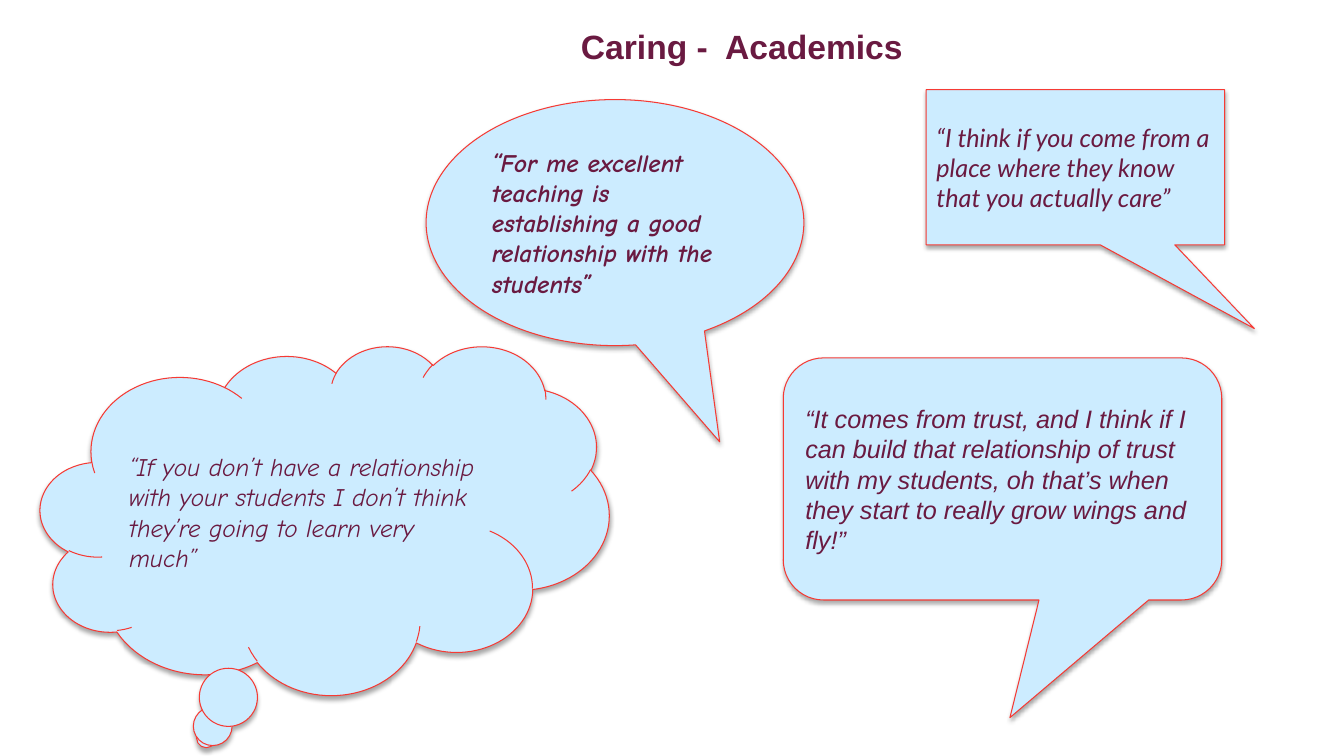
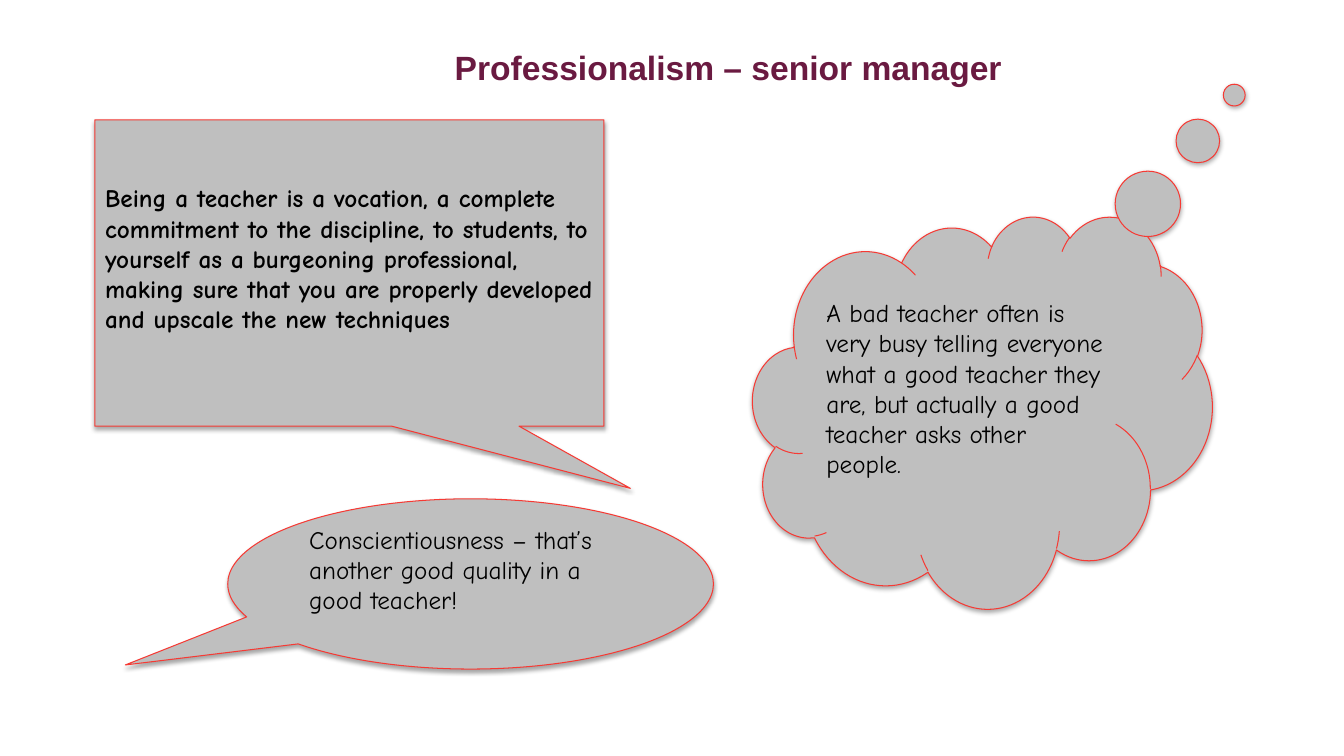
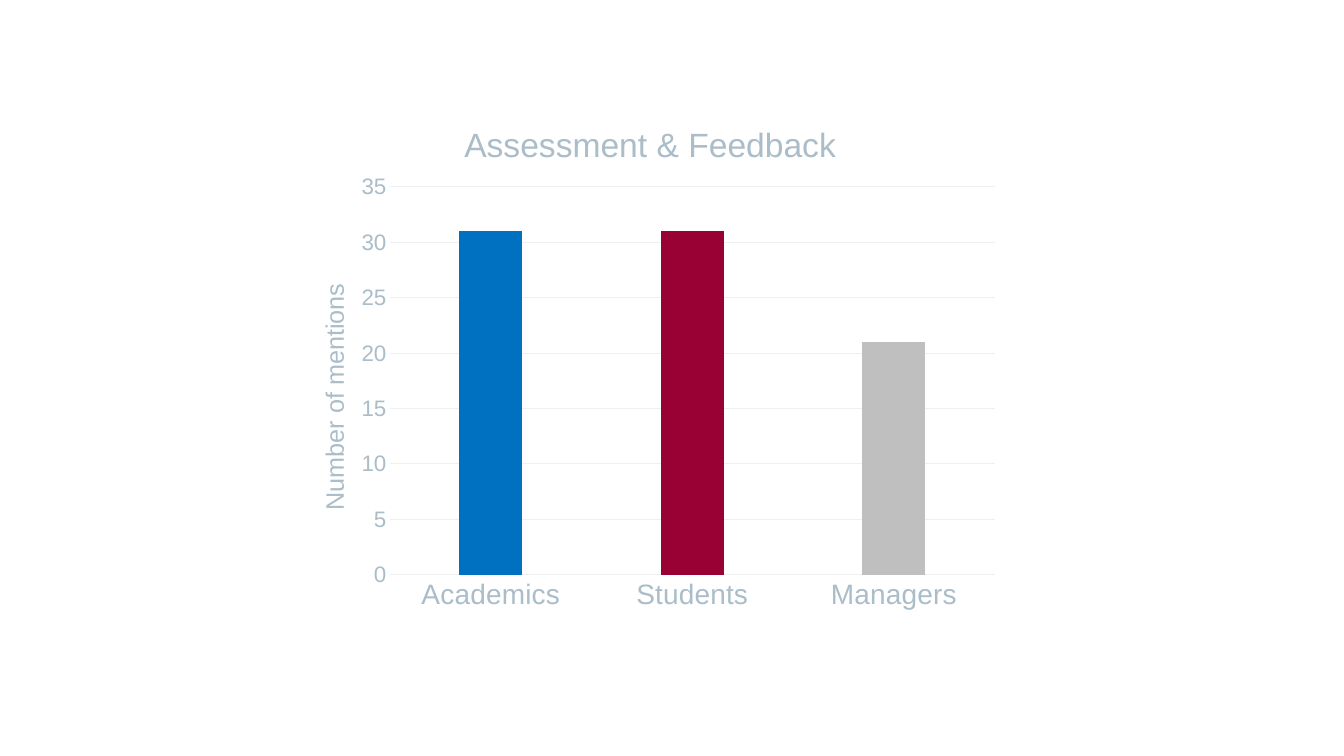
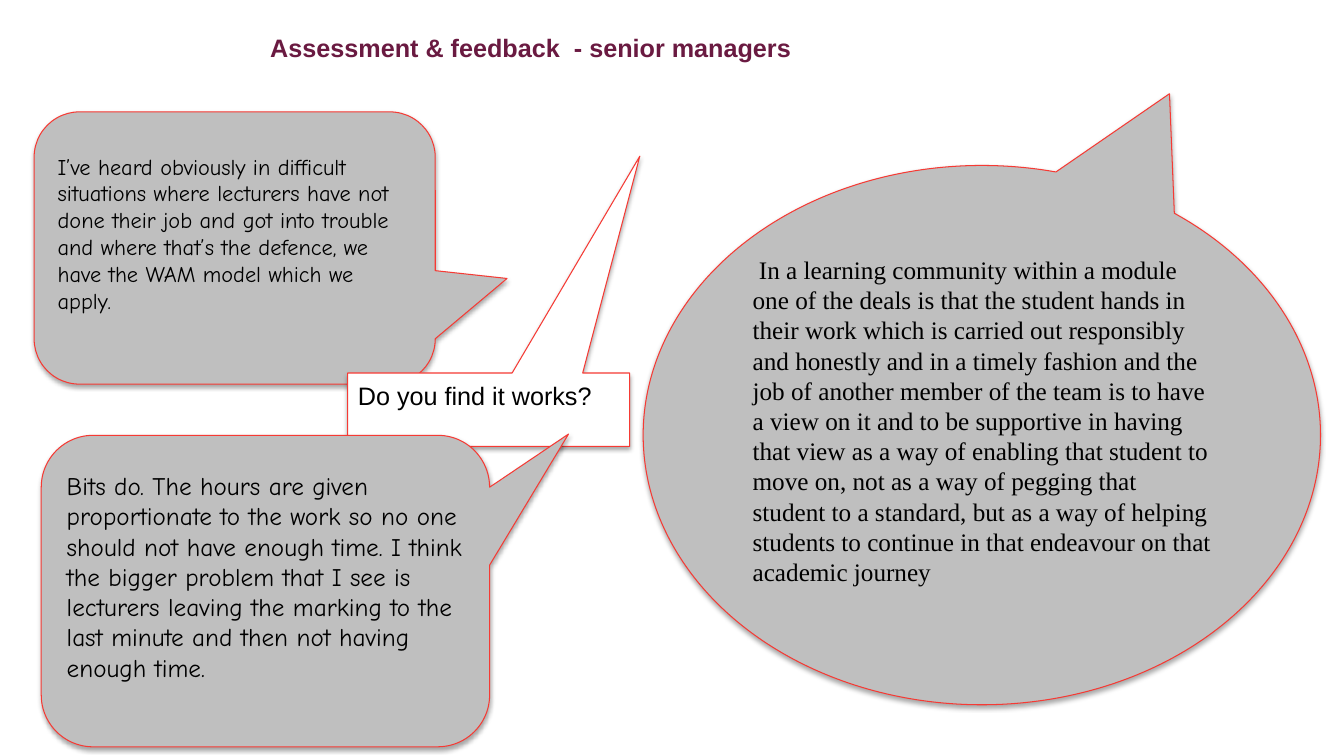
"""Build four slides of interview quotes and a chart about teaching."""
from lxml import etree
from pptx import Presentation
from pptx.chart.data import CategoryChartData
from pptx.dml.color import RGBColor
from pptx.enum.chart import XL_CHART_TYPE as ChartType, XL_TICK_MARK as Tick
from pptx.enum.shapes import MSO_SHAPE as Shape
from pptx.enum.text import MSO_ANCHOR as Anchor, MSO_AUTO_SIZE as AutoSize, PP_ALIGN as Align
from pptx.oxml.ns import qn
from pptx.util import Cm, Pt

PLUM = RGBColor(0x6A, 0x1A, 0x41)
BLACK = RGBColor(0x00, 0x00, 0x00)
WHITE = RGBColor(0xFF, 0xFF, 0xFF)
SKY = RGBColor(0xCC, 0xEC, 0xFF)
SILVER = RGBColor(0xBF, 0xBF, 0xBF)
RED = RGBColor(0xF6, 0x3A, 0x34)
BLUE = RGBColor(0x00, 0x70, 0xC0)
CRIMSON = RGBColor(0x99, 0x00, 0x33)
MIST = RGBColor(0xAA, 0xBD, 0xC8)
PALE = RGBColor(0xEC, 0xF0, 0xF2)

SANS, HAND, HUMAN, SERIF = "Arial", "Comic Neue", "Lato", "Times New Roman"
TITLE_ONLY, BLANK = 5, 6
INSET = 0.13
LOWER_SPACE = 0.74


def set_font(font, size, color, name=SANS, bold=False, italic=False):
    font.name, font.size = name, Pt(size)
    font.bold, font.italic = bold, italic
    font.color.rgb = color


def write_text(frame, text, anchor=Anchor.MIDDLE, lift=0, **style):
    """Fill a frame with one left-aligned paragraph, lifted by extra space below."""
    frame.word_wrap = True
    frame.auto_size = AutoSize.NONE
    frame.vertical_anchor = anchor
    frame.margin_left = frame.margin_right = Cm(2 * INSET)
    frame.margin_top, frame.margin_bottom = Cm(INSET), Cm(INSET + lift)
    paragraph = frame.paragraphs[0]
    paragraph.alignment = Align.LEFT
    run = paragraph.add_run()
    run.text = text
    set_font(run.font, **style)


def add_titled_slide(deck, title, box, size=24):
    slide = deck.slides.add_slide(deck.slide_layouts[TITLE_ONLY])
    heading = slide.shapes.title
    heading.left, heading.top, heading.width, heading.height = map(Cm, box)
    write_text(heading.text_frame, title, anchor=Anchor.TOP,
               size=size, color=PLUM, bold=True)
    return slide


def add_soft_shadow(shape):
    shape.shadow.inherit = False
    effects = shape._element.spPr.find(qn("a:effectLst"))
    shadow = etree.SubElement(effects, qn("a:outerShdw"), blurRad="40000",
                              dist="23000", dir="5400000", rotWithShape="0")
    tint = etree.SubElement(shadow, qn("a:srgbClr"), val=str(BLACK))
    etree.SubElement(tint, qn("a:alpha"), val="35000")


def add_callout(slide, kind, box, text, pointer=(), fill=SILVER, lift=LOWER_SPACE,
                size=18, color=BLACK, **style):
    """Add a speech or thought bubble whose pointer is relative to its centre."""
    bubble = slide.shapes.add_shape(kind, *map(Cm, box))
    for index, offset in enumerate(pointer):
        bubble.adjustments[index] = offset
    bubble.fill.solid()
    bubble.fill.fore_color.rgb = fill
    bubble.line.color.rgb = RED
    bubble.line.width = Pt(0.75)
    add_soft_shadow(bubble)
    write_text(bubble.text_frame, text, lift=lift, size=size, color=color, **style)


def place(element, index, **settings):
    """Give a chart part a manual layout, as fractions of the chart."""
    for old in element.findall(qn("c:layout")):
        element.remove(old)
    layout = etree.Element(qn("c:layout"))
    manual = etree.SubElement(layout, qn("c:manualLayout"))
    for tag, value in settings.items():
        etree.SubElement(manual, qn(f"c:{tag}"), val=str(value))
    element.insert(index, layout)


def write_chart_title(title, text, size, x, y):
    frame = title.text_frame
    frame.text = text
    set_font(frame.paragraphs[0].runs[0].font, size, MIST)
    place(title._element, 1, xMode="edge", yMode="edge", x=x, y=y)


def style_axis(axis, size):
    axis.major_tick_mark = axis.minor_tick_mark = Tick.NONE
    set_font(axis.tick_labels.font, size, MIST)


def draw_pale(line):
    line.color.rgb = PALE
    line.width = Pt(0.75)


def add_mentions_chart(slide, box, title, axis_title, mentions, colors):
    data = CategoryChartData()
    data.categories = list(mentions)
    data.add_series("Series 1", list(mentions.values()))
    chart = slide.shapes.add_chart(ChartType.COLUMN_CLUSTERED, *map(Cm, box), data).chart
    set_font(chart.font, 10, MIST)
    chart.has_legend = False
    write_chart_title(chart.chart_title, title, 24, 0.24, 0.05)
    place(chart._chartSpace.chart.plotArea, 0, layoutTarget="inner", xMode="edge",
          yMode="edge", x=0.146, y=0.181, w=0.833, h=0.732)

    categories, values = chart.category_axis, chart.value_axis
    style_axis(categories, 20)
    draw_pale(categories.format.line)
    style_axis(values, 16)
    values.format.line.fill.background()
    values.minimum_scale, values.maximum_scale, values.major_unit = 0, 35, 5
    draw_pale(values.major_gridlines.format.line)
    write_chart_title(values.axis_title, axis_title, 18, 0.04, 0.355)
    turned = values.axis_title.text_frame._txBody.bodyPr
    turned.set("rot", "-5400000")
    turned.set("vert", "horz")

    plot = chart.plots[0]
    plot.vary_by_categories = False
    plot.gap_width, plot.overlap = 219, -27
    for index, color in enumerate(colors):
        fill = plot.series[0].points[index].format.fill
        fill.solid()
        fill.fore_color.rgb = color


def build_caring(deck):
    slide = add_titled_slide(deck, "Caring -  Academics", (14.38, 0.51, 8.97, 1.27))
    academic = dict(fill=SKY, color=PLUM, italic=True, lift=0)
    add_callout(slide, Shape.OVAL_CALLOUT, (10.74, 2.51, 9.52, 6.2),
                "“For me excellent teaching is establishing a good relationship "
                "with the students”",
                pointer=(0.277, 0.891), name=HAND, bold=True, **academic)
    add_callout(slide, Shape.RECTANGULAR_CALLOUT, (23.34, 2.26, 7.52, 3.91),
                "“I think if you come from a place where they know that you "
                "actually care”",
                pointer=(0.6, 1.04), name=HUMAN, **academic)
    add_callout(slide, Shape.ROUNDED_RECTANGULAR_CALLOUT, (19.74, 9.02, 11.05, 6.1),
                "“It comes from trust, and I think if I can build that relationship "
                "of trust with my students, oh that’s when they start to really "
                "grow wings and fly!”",
                pointer=(0.017, 0.986), **academic)
    add_callout(slide, Shape.CLOUD_CALLOUT, (1.02, 8.71, 14.33, 8.79),
                "“If you don’t have a relationship with your students I don’t think "
                "they’re going to learn very much”",
                name=HAND, **academic)


def build_professionalism(deck):
    slide = add_titled_slide(deck, "Professionalism – senior manager",
                             (11.2, 1.04, 16.89, 1.27))
    add_callout(slide, Shape.RECTANGULAR_CALLOUT, (2.39, 3.02, 12.83, 7.72),
                "Being a teacher is a vocation, a complete commitment to the "
                "discipline, to students, to yourself as a burgeoning professional, "
                "making sure that you are properly developed and upscale the new "
                "techniques",
                pointer=(0.552, 0.703), name=HAND, bold=True)
    add_callout(slide, Shape.CLOUD_CALLOUT, (18.97, 5.44, 11.58, 9.88),
                "A bad teacher often is very busy telling everyone what a good "
                "teacher they are, but actually a good teacher asks other people.",
                pointer=(0.548, -0.808), name=HAND)
    add_callout(slide, Shape.OVAL_CALLOUT, (5.74, 12.57, 12.24, 4.29),
                "Conscientiousness – that’s another good quality in a good teacher!",
                pointer=(-0.711, 0.476), name=HAND)


def build_mentions(deck):
    slide = deck.slides.add_slide(deck.slide_layouts[BLANK])
    add_mentions_chart(slide, (7.16, 2.29, 18.29, 13.36), "Assessment & Feedback",
                       "Number of mentions",
                       {"Academics": 31, "Students": 31, "Managers": 21},
                       (BLUE, CRIMSON, SILVER))


def build_feedback(deck):
    slide = add_titled_slide(deck, "Assessment & feedback  - senior managers",
                             (6.55, 0.69, 14.5, 1.8), size=18)
    add_callout(slide, Shape.OVAL_CALLOUT, (16.21, 4.17, 17.07, 13.59),
                " In a learning community within a module one of the deals is that "
                "the student hands in their work which is carried out responsibly "
                "and honestly and in a timely fashion and the job of another member "
                "of the team is to have a view on it and to be supportive in having "
                "that view as a way of enabling that student to move on, not as a "
                "way of pegging that student to a standard, but as a way of helping "
                "students to continue in that endeavour on that academic journey",
                pointer=(0.277, -0.633), name=SERIF)
    add_callout(slide, Shape.ROUNDED_RECTANGULAR_CALLOUT, (0.86, 2.82, 10.11, 6.86),
                "I’ve heard obviously in difficult situations where lecturers have "
                "not done their job and got into trouble and where that’s the "
                "defence, we have the WAM model which we apply.",
                pointer=(0.679, 0.112), name=HAND, size=16)
    add_callout(slide, Shape.RECTANGULAR_CALLOUT, (8.76, 9.4, 7.11, 1.85),
                "Do you find it works?", pointer=(0.536, -3.454), fill=WHITE)
    add_callout(slide, Shape.ROUNDED_RECTANGULAR_CALLOUT, (1.04, 10.97, 11.3, 7.85),
                "Bits do. The hours are given proportionate to the work so no one "
                "should not have enough time. I think the bigger problem that I see "
                "is lecturers leaving the marking to the last minute and then not "
                "having enough time.",
                pointer=(0.676, -0.504), name=HAND)


def main():
    deck = Presentation()
    deck.slide_width, deck.slide_height = Cm(33.87), Cm(19.05)
    for build in (build_caring, build_professionalism, build_mentions, build_feedback):
        build(deck)
    deck.save("out.pptx")


if __name__ == "__main__":
    main()
